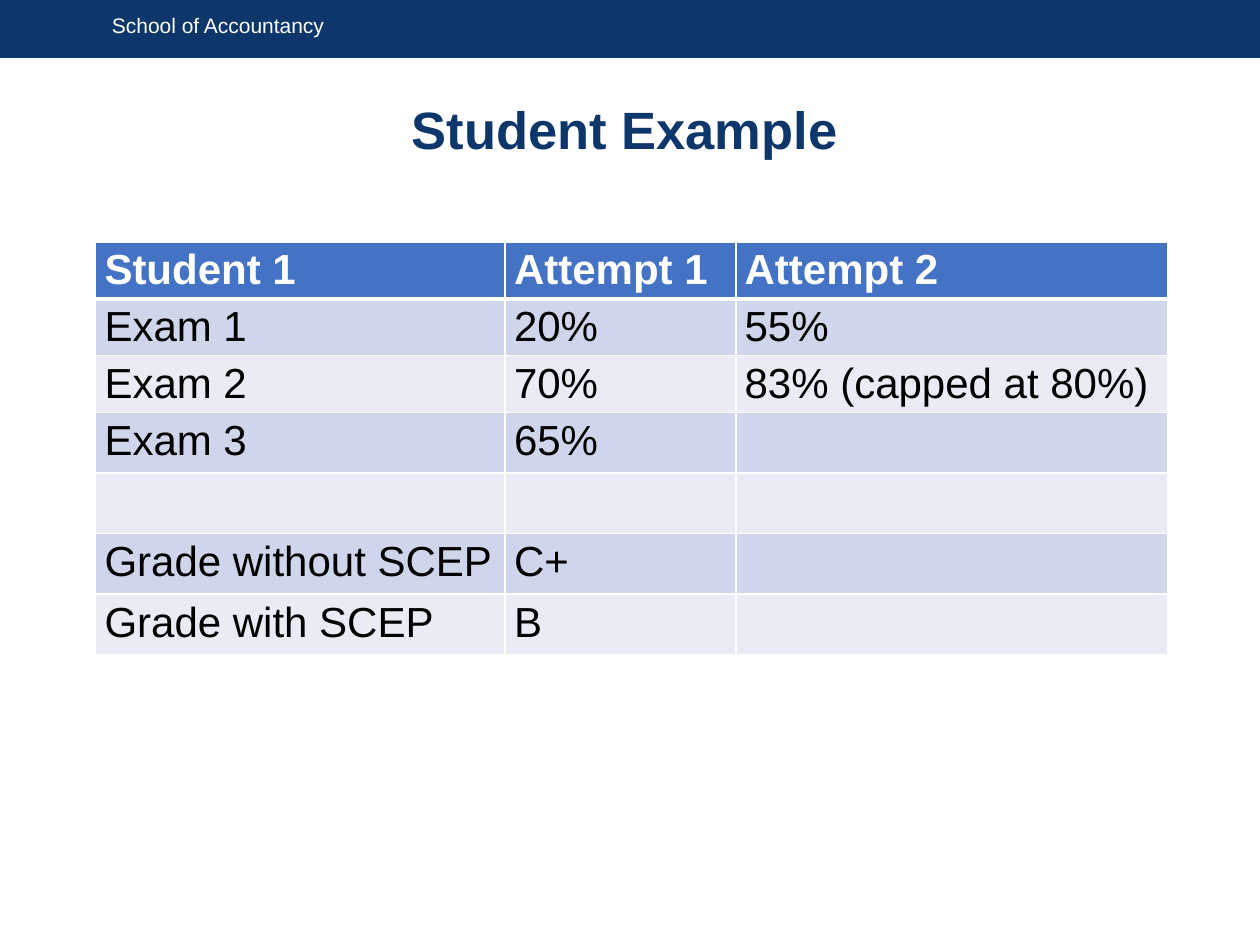
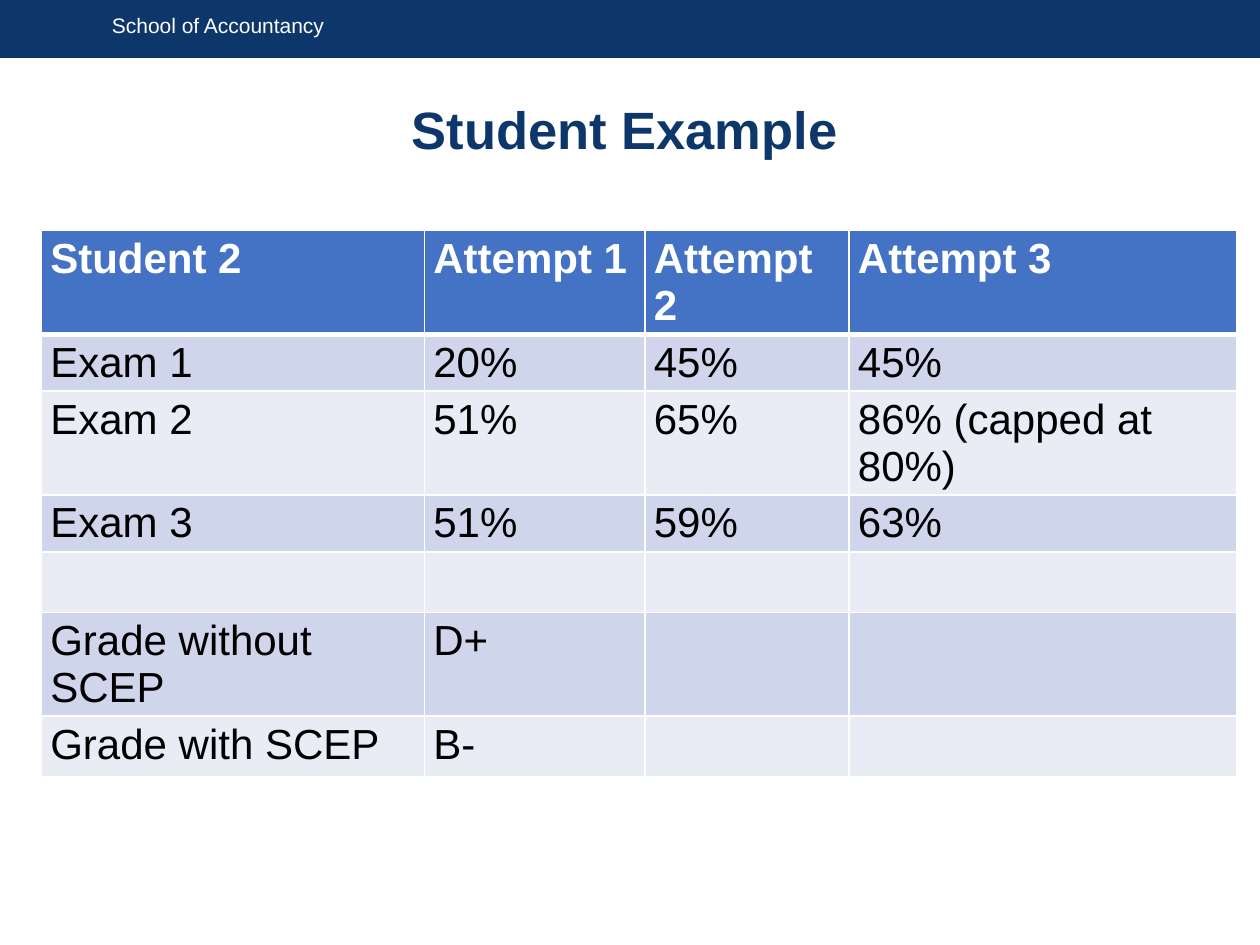
"""Build two slides that compare student exam attempts and grades."""
from lxml.etree import SubElement
from pptx import Presentation
from pptx.dml.color import RGBColor
from pptx.enum.shapes import MSO_SHAPE
from pptx.enum.text import MSO_ANCHOR, PP_ALIGN
from pptx.oxml.ns import qn
from pptx.util import Inches, Pt

COLORS = {
    "navy": "0D366A",
    "white": "FFFFFF",
    "black": "000000",
    "header": "4472C4",
    "odd": "CFD5EA",
    "even": "E9EBF5",
}
FONT = "Arial"
SCHOOL = "School of Accountancy"
TITLE = "Student Example"
STUDENTS = [
    {
        "corner": (0.76, 1.92),
        "columns": (3.25, 1.83, 3.43),
        "rows": [
            ("Student 1", "Attempt 1", "Attempt 2"),
            ("Exam 1", "20%", "55%"),
            ("Exam 2", "70%", "83% (capped at 80%)"),
            ("Exam 3", "65%", ""),
            ("", "", ""),
            ("Grade without SCEP", "C+", ""),
            ("Grade with SCEP", "B", ""),
        ],
    },
    {
        "corner": (0.33, 1.83),
        "columns": (3.04, 1.75, 1.62, 3.08),
        "rows": [
            ("Student 2", "Attempt 1", "Attempt 2", "Attempt 3"),
            ("Exam 1", "20%", "45%", "45%"),
            ("Exam 2", "51%", "65%", "86% (capped at 80%)"),
            ("Exam 3", "51%", "59%", "63%"),
            ("", "", "", ""),
            ("Grade without SCEP", "D+", "", ""),
            ("Grade with SCEP", "B-", "", ""),
        ],
    },
]
FULL_ROW, GAPPED_ROW = 0.45, 0.48
SIDE_INSET, END_INSET = Inches(0.07), Inches(0.04)


def rgb(name):
    return RGBColor.from_string(COLORS[name])


def add_text(paragraph, text, size, color, bold=False):
    run = paragraph.add_run()
    run.text = text
    font = run.font
    font.name, font.size, font.bold = FONT, Pt(size), bold
    font.color.rgb = rgb(color)


def add_band(slide, left, top, width, height):
    band = slide.shapes.add_shape(
        MSO_SHAPE.RECTANGLE, *map(Inches, (left, top, width, height)))
    band.shadow.inherit = False
    band.fill.solid()
    band.fill.fore_color.rgb = rgb("navy")
    band.line.fill.background()
    return band


def add_heading(slide):
    add_band(slide, 0, 0, 10, 0.46)
    school = add_band(slide, 0.79, 0.05, 3.17, 0.3).text_frame
    school.vertical_anchor = MSO_ANCHOR.MIDDLE
    school.paragraphs[0].alignment = PP_ALIGN.LEFT
    add_text(school.paragraphs[0], SCHOOL, 12, "white")

    title = slide.shapes.title
    title.left, title.top, title.width, title.height = map(
        Inches, (0.65, 0.43, 8.62, 1.24))
    title.text_frame.vertical_anchor = MSO_ANCHOR.MIDDLE
    line = title.text_frame.paragraphs[0]
    line.alignment, line.line_spacing = PP_ALIGN.CENTER, 0.9
    add_text(line, TITLE, 30, "navy", bold=True)


def add_borders(cell, row):
    widths = {"L": 1, "R": 1, "T": 3 if row == 1 else 1, "B": 3 if row == 0 else 1}
    properties = cell._tc.get_or_add_tcPr()
    for side, width in widths.items():
        border = SubElement(properties, qn(f"a:ln{side}"), w=str(Pt(width)))
        paint = SubElement(border, qn("a:solidFill"))
        SubElement(paint, qn("a:srgbClr"), val=COLORS["white"])


def format_cell(cell, text, row):
    is_header = row == 0
    add_borders(cell, row)
    cell.fill.solid()
    cell.fill.fore_color.rgb = rgb("header" if is_header else "odd" if row % 2 else "even")
    cell.margin_left = cell.margin_right = SIDE_INSET
    cell.margin_top = cell.margin_bottom = END_INSET
    if text:
        add_text(cell.text_frame.paragraphs[0], text, 24,
                 "white" if is_header else "black", is_header)


def add_results(slide, student):
    rows, columns = student["rows"], student["columns"]
    heights = [FULL_ROW if all(row) else GAPPED_ROW for row in rows]
    frame = (*student["corner"], sum(columns), sum(heights))
    results = slide.shapes.add_table(
        len(rows), len(columns), *map(Inches, frame)).table
    for column, width in zip(results.columns, columns):
        column.width = Inches(width)
    for number, (row, height) in enumerate(zip(rows, heights)):
        results.rows[number].height = Inches(height)
        for column, text in enumerate(row):
            format_cell(results.cell(number, column), text, number)


def main():
    deck = Presentation()
    deck.slide_width, deck.slide_height = Inches(10), Inches(7.5)
    for student in STUDENTS:
        slide = deck.slides.add_slide(deck.slide_layouts[5])
        add_heading(slide)
        add_results(slide, student)
    deck.save("out.pptx")


if __name__ == "__main__":
    main()
